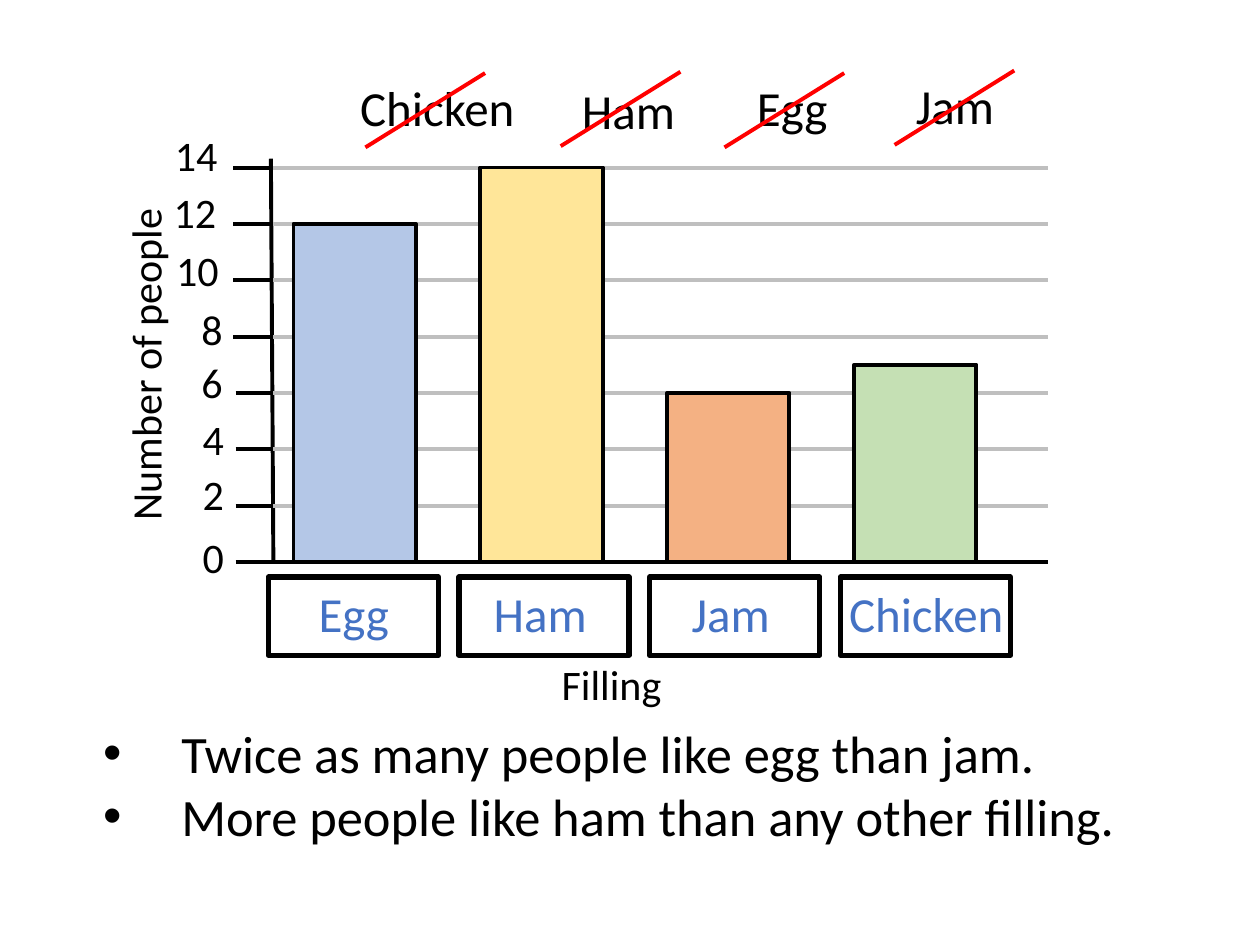
import pptx
import pptx.util
import pptx.dml.color
import pptx.enum.shapes
import pptx.enum.text
import pptx.oxml.ns
from lxml import etree

Inches = pptx.util.Inches
COLOURS = {
    "ink": "000000", "paper": "FFFFFF", "grid": "BFBFBF", "strike": "FF0000",
    "answer": "4472C4", "egg": "B4C7E7", "ham": "FFE699", "jam": "F4B183",
    "chicken": "C5E0B4",
}
BASE, TOP, AXIS, RIGHT = 4.46, 1.33, 2.17, 8.32
UNIT = (BASE - TOP) / 14
SCALE_LABELS = [
    (0, 1.51, 4.17), (2, 1.51, 3.67), (4, 1.51, 3.23), (6, 1.5, 2.78),
    (8, 1.5, 2.36), (10, 1.3, 1.89), (12, 1.28, 1.43), (14, 1.29, 0.98),
]
FILLINGS = [
    ("Egg", 12, 2.43, 0.76), ("Ham", 14, 3.82, 0.95),
    ("Jam", 6, 5.39, 0.83), ("Chicken", 7, 6.64, 1.44),
]
CROSSED_OUT = [
    ("Chicken", 2.76, 0.57, 1.44, 2.9, 1.17),
    ("Ham", 4.52, 0.59, 0.95, 4.45, 1.16),
    ("Egg", 5.91, 0.57, 0.76, 5.75, 1.17),
    ("Jam", 7.17, 0.55, 0.83, 7.1, 1.15),
]
STATEMENTS = [
    "Twice as many people like egg than jam.",
    "More people like ham than any other filling.",
]


class SlideBuilder:
    """Draws styled elements on the current slide."""

    def __init__(self, slide):
        self.slide = slide
        self.font = "Calibri"

    def colour(self, key):
        return pptx.dml.color.RGBColor.from_string(COLOURS[key])

    def line(self, x1, y1, x2, y2, colour="ink"):
        connector = self.slide.shapes.add_connector(
            pptx.enum.shapes.MSO_CONNECTOR.STRAIGHT,
            Inches(x1), Inches(y1), Inches(x2), Inches(y2))
        connector.line.color.rgb = self.colour(colour)
        connector.line.width = pptx.util.Pt(2.25)
        etree.SubElement(connector._element.spPr, pptx.oxml.ns.qn("a:effectLst"))

    def rectangle(self, left, top, width, height, fill, weight):
        box = self.slide.shapes.add_shape(
            pptx.enum.shapes.MSO_SHAPE.RECTANGLE,
            Inches(left), Inches(top), Inches(width), Inches(height))
        box.shadow.inherit = False
        box.fill.solid()
        box.fill.fore_color.rgb = self.colour(fill)
        box.line.color.rgb = self.colour("ink")
        box.line.width = pptx.util.Pt(weight)

    def text(self, lines, left, top, width, height, size,
             colour="ink", rotation=0, bullets=False):
        box = self.slide.shapes.add_textbox(
            Inches(left), Inches(top), Inches(width), Inches(height))
        box.rotation = rotation
        frame = box.text_frame
        frame.word_wrap = bullets
        frame.auto_size = pptx.enum.text.MSO_AUTO_SIZE.SHAPE_TO_FIT_TEXT
        frame.text = "\n".join(lines)
        font_format = {"name": self.font, "size": pptx.util.Pt(size)}
        for paragraph in frame.paragraphs:
            if bullets:
                self.bullet(paragraph)
            font = paragraph.runs[0].font
            for attribute, value in font_format.items():
                setattr(font, attribute, value)
            font.color.rgb = self.colour(colour)

    def bullet(self, paragraph):
        properties = paragraph._p.get_or_add_pPr()
        indent = Inches(0.62)
        properties.set("marL", str(indent))
        properties.set("indent", str(-indent))
        typeface = etree.SubElement(properties, pptx.oxml.ns.qn("a:buFont"))
        typeface.set("typeface", "Arial")
        mark = etree.SubElement(properties, pptx.oxml.ns.qn("a:buChar"))
        mark.set("char", "•")


def draw_scale(builder):
    builder.line(AXIS, BASE, AXIS - 0.02, 1.26)
    for value, left, top in SCALE_LABELS:
        y = BASE - value * UNIT
        tick = 1.87 if value < 8 else 1.85
        builder.line(tick, y, tick + 0.3, y)
        builder.line(AXIS, y, RIGHT, y, "grid" if value else "ink")
        width = 0.37 if value < 10 else 0.54
        builder.text([str(value)], left, top, width, 0.5, 24)
    builder.text(["Number of people"], -0.2, 2.63, 2.7, 0.5, 24, rotation=270)
    builder.text(["Filling"], 4.36, 5.18, 1, 0.5, 24)


def draw_fillings(builder):
    for index, (filling, people, left, width) in enumerate(FILLINGS):
        height = people * UNIT
        builder.rectangle(2.33 + 1.483 * index, BASE - height, 0.97, height,
                          filling.lower(), 2.25)
        builder.rectangle(2.13 + 1.513 * index, 4.58, 1.35, 0.62, "paper", 3)
        builder.text([filling], left, 4.58, width, 0.57, 28, "answer")


def draw_crossed_out(builder):
    for filling, left, top, width, start, bottom in CROSSED_OUT:
        builder.text([filling], left, top, width, 0.57, 28)
        builder.line(start, bottom, start + 0.95, bottom - 0.59, "strike")


def main():
    presentation = pptx.Presentation()
    presentation.slide_width = Inches(10)
    presentation.slide_height = Inches(7.5)
    builder = SlideBuilder(
        presentation.slides.add_slide(presentation.slide_layouts[6]))
    draw_scale(builder)
    draw_fillings(builder)
    draw_crossed_out(builder)
    builder.text(STATEMENTS, 0.72, 5.67, 8.31, 1.11, 30, bullets=True)
    presentation.save("out.pptx")


if __name__ == "__main__":
    main()
